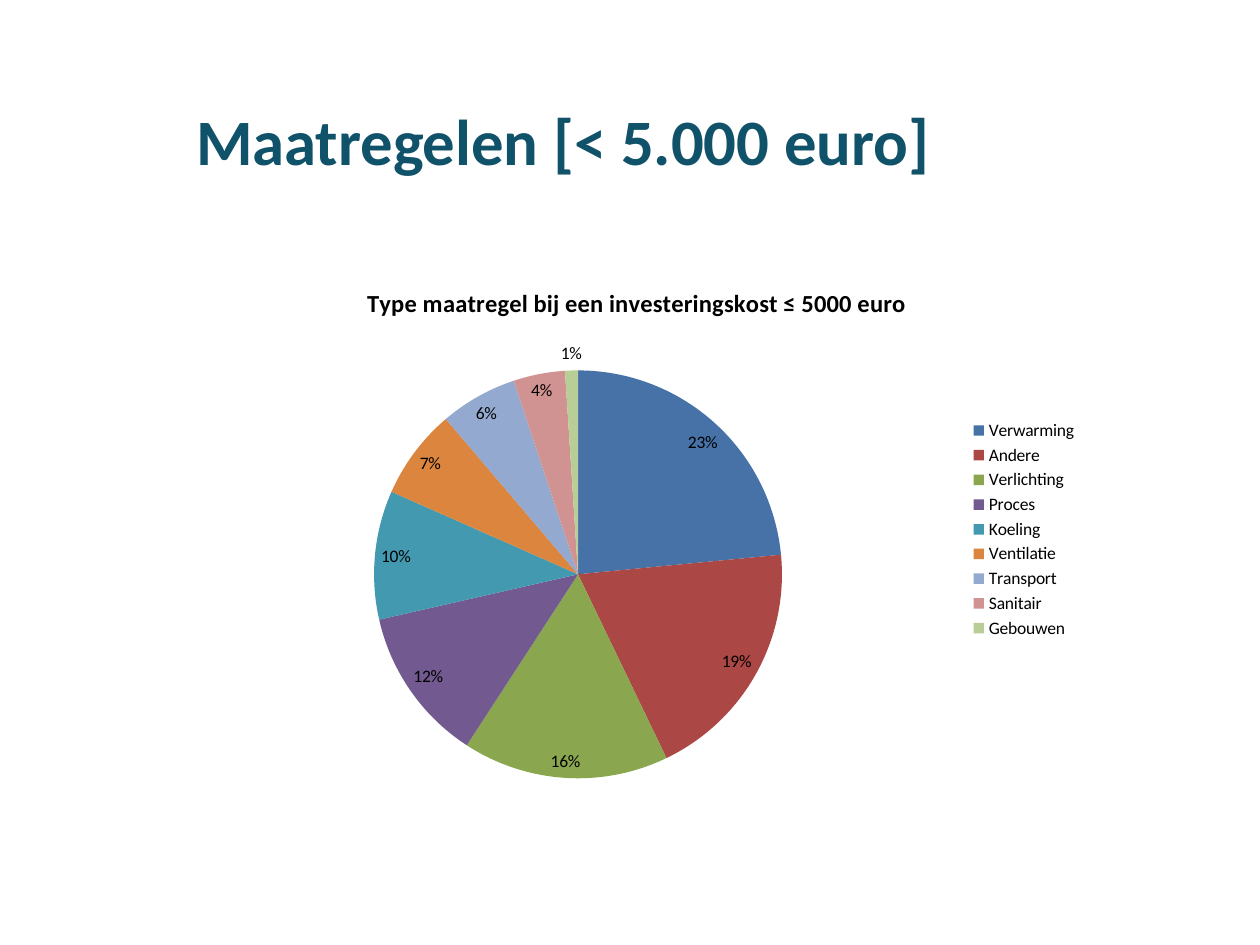
import lxml.etree
import pptx
import pptx.chart.data
import pptx.dml.color
import pptx.enum.chart
import pptx.enum.text
import pptx.oxml
import pptx.oxml.ns
import pptx.util

Pt = pptx.util.Pt

COLOURS = {
    "title": "105269",
    "text": "000000",
    "Verwarming": "4672A8",
    "Andere": "AB4744",
    "Verlichting": "8AA64F",
    "Proces": "725990",
    "Koeling": "4299B0",
    "Ventilatie": "DC853E",
    "Transport": "93A9CF",
    "Sanitair": "D19392",
    "Gebouwen": "B9CD96",
}

SHARES = {
    "Verwarming": 23,
    "Andere": 19,
    "Verlichting": 16,
    "Proces": 12,
    "Koeling": 10,
    "Ventilatie": 7,
    "Transport": 6,
    "Sanitair": 4,
    "Gebouwen": 1,
}


class SlideBuilder:
    typeface = "Calibri"

    def __init__(self, slide):
        self.slide = slide

    def style(self, font, size, colour, bold=False):
        font.name = self.typeface
        font.size = Pt(size)
        font.bold = bold
        font.color.rgb = pptx.dml.color.RGBColor.from_string(COLOURS[colour])

    def heading(self, text, left, top, width, height):
        box = self.slide.shapes.add_textbox(Pt(left), Pt(top), Pt(width), Pt(height))
        frame = box.text_frame
        frame.word_wrap = True
        frame.vertical_anchor = pptx.enum.text.MSO_ANCHOR.TOP
        paragraph = frame.paragraphs[0]
        paragraph.text = text
        paragraph.line_spacing = Pt(38)
        self.style(paragraph.font, 37, "title", bold=True)

    def pie(self, title, shares, left, top, width, height, plot_area):
        data = pptx.chart.data.CategoryChartData()
        data.categories = list(shares)
        data.add_series("Series 1", list(shares.values()))
        chart = self.slide.shapes.add_chart(
            pptx.enum.chart.XL_CHART_TYPE.PIE,
            Pt(left), Pt(top), Pt(width), Pt(height), data,
        ).chart
        self.style(chart.font, 10, "text")

        chart.has_title = True
        chart_title = chart.chart_title
        chart_title.include_in_layout = False
        heading = chart_title.text_frame.paragraphs[0]
        heading.text = title
        self.style(heading.font, 14, "text", bold=True)

        chart.has_legend = True
        chart.legend.position = pptx.enum.chart.XL_LEGEND_POSITION.RIGHT
        chart.legend.include_in_layout = False
        self.style(chart.legend.font, 10, "text")

        plot = chart.plots[0]
        plot.vary_by_categories = True
        for index, category in enumerate(shares):
            fill = plot.series[0].points[index].format.fill
            fill.solid()
            fill.fore_color.rgb = pptx.dml.color.RGBColor.from_string(COLOURS[category])

        plot.has_data_labels = True
        labels = plot.data_labels
        labels.show_value = False
        labels.show_percentage = True
        labels.number_format = "0%"
        labels.number_format_is_linked = False
        labels.position = pptx.enum.chart.XL_LABEL_POSITION.BEST_FIT
        self.style(labels.font, 10, "text")
        self.place_plot(chart, plot_area)

    def place_plot(self, chart, plot_area):
        qn = pptx.oxml.ns.qn
        area = chart.element.find(".//" + qn("c:plotArea"))
        for old_layout in area.findall(qn("c:layout")):
            area.remove(old_layout)
        layout = lxml.etree.Element(qn("c:layout"))
        manual = lxml.etree.SubElement(layout, qn("c:manualLayout"))
        settings = {"layoutTarget": "inner", "xMode": "edge", "yMode": "edge", **plot_area}
        for tag, value in settings.items():
            lxml.etree.SubElement(manual, qn("c:" + tag)).set("val", str(value))
        area.insert(0, layout)


def main():
    presentation = pptx.Presentation()
    presentation.slide_width = Pt(720)
    presentation.slide_height = Pt(540)
    builder = SlideBuilder(presentation.slides.add_slide(presentation.slide_layouts[6]))
    builder.heading("Maatregelen [< 5.000 euro]", 105, 60.5, 579, 85)
    builder.pie(
        "Type maatregel bij een investeringskost ≤ 5000 euro",
        SHARES, 105, 151, 518, 303,
        {"x": 0.21, "y": 0.2, "w": 0.45, "h": 0.77},
    )
    presentation.save("out.pptx")


if __name__ == "__main__":
    main()
